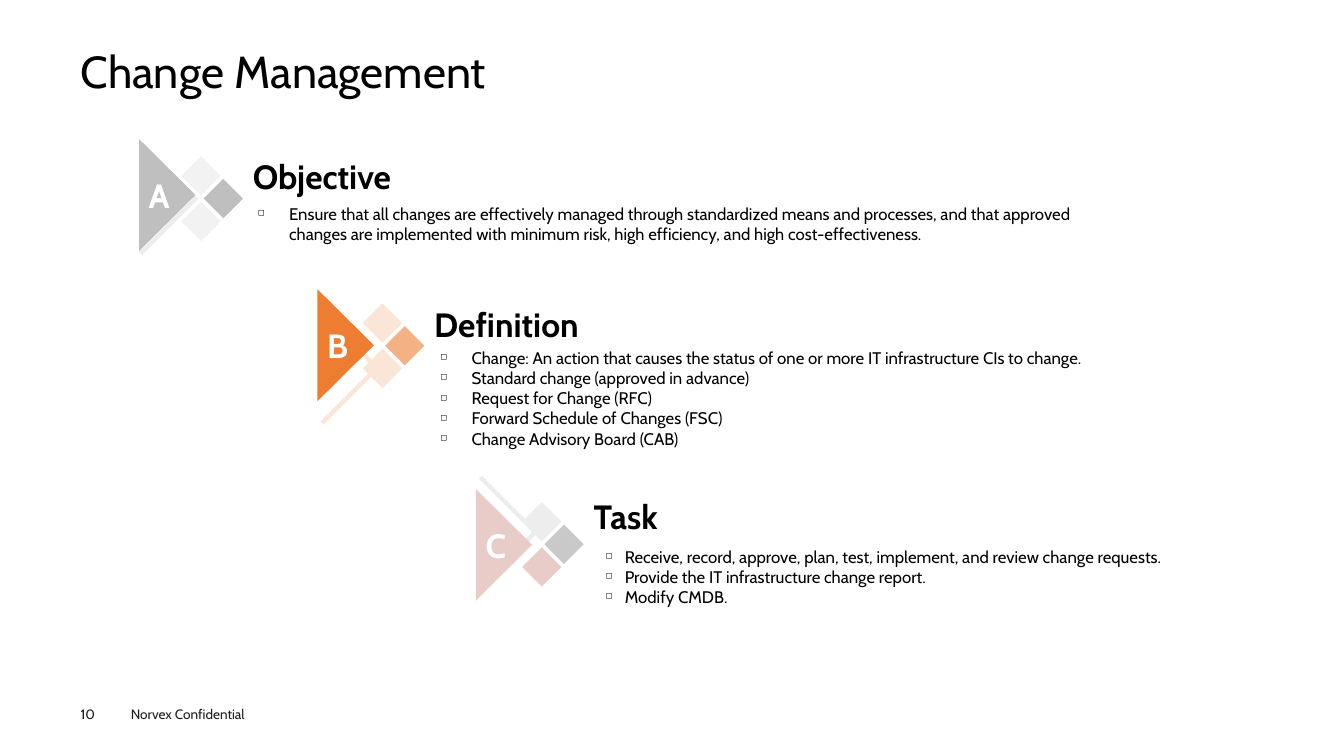
from dataclasses import dataclass

from lxml.etree import SubElement
from pptx import Presentation
from pptx.dml.color import RGBColor
from pptx.enum.shapes import MSO_SHAPE as Preset
from pptx.enum.text import MSO_ANCHOR as Anchor, PP_ALIGN as Align
from pptx.oxml.ns import qn
from pptx.util import Emu, Inches, Pt

CELL = 0.1
COLUMNS, ROWS = 133.33, 75
FONT = "Cabin"
COLORS = {
    "black": "000000",
    "white": "FFFFFF",
    "footer": "1D1D1B",
    "gray": "BFBFBF",
    "mid_gray": "C9C9C9",
    "pale_gray": "EDEDED",
    "faint_gray": "F2F2F2",
    "orange": "ED7D31",
    "light_orange": "F4B183",
    "pale_orange": "FBE5D6",
    "rose": "E7CCC7",
}
DIAMOND_SIZE = 3.9
DIAMOND_OFFSETS = ((0, 0), (0, 4.5), (2.2, 2.25))
TRIANGLE = ((0, 0), (5.6, 5.55), (0, 11.1))
CHEVRON = ((0.3, 0), (5.9, 5.6), (0.3, 11.2), (0, 10.9), (5.3, 5.6), (0, 0.3))

Point = tuple[float, float]


@dataclass(frozen=True)
class Area:
    column: float
    row: float
    columns: float
    rows: float


@dataclass(frozen=True)
class Style:
    size: float
    color: str = "black"
    bold: bool = False


@dataclass(frozen=True)
class Section:
    letter: str
    heading: str
    items: tuple[str, ...]
    triangle: Point
    chevron: Point
    diamonds: Point
    triangle_color: str
    chevron_color: str
    diamond_colors: tuple[str, str, str]
    heading_at: Point
    body: Area
    indent: float
    hanging: float


TITLE = Style(32)
HEADING = Style(24, bold=True)
LETTER = Style(24, "white", True)
BODY = Style(12)
FOOTER = Style(9.7, "footer")

SECTIONS = (
    Section(
        "A", "Objective",
        ("Ensure that all changes are effectively managed through standardized means and processes, "
         "and that approved changes are implemented with minimum risk, high efficiency, "
         "and high cost-effectiveness.",),
        (13.8, 13.8), (13.8, 14.1), (18, 15.5),
        "gray", "pale_gray", ("faint_gray", "faint_gray", "gray"),
        (24.1, 14.1), Area(19.6, 19.7, 89, 6.6), 8.1, 3.1,
    ),
    Section(
        "B", "Definition",
        ("Change: An action that causes the status of one or more IT infrastructure CIs to change.",
         "Standard change (approved in advance)",
         "Request for Change (RFC)",
         "Forward Schedule of Changes (FSC)",
         "Change Advisory Board (CAB)"),
        (31.5, 28.7), (31.8, 30.9), (36, 30.1),
        "orange", "pale_orange", ("pale_orange", "pale_orange", "light_orange"),
        (42.1, 28.7), Area(42.7, 34, 72.9, 14.9), 3.1, 3.1,
    ),
    Section(
        "C", "Task",
        ("Receive, record, approve, plan, test, implement, and review change requests.",
         "Provide the IT infrastructure change report.",
         "Modify CMDB."),
        (47.2, 48.5), (47.5, 47.2), (51.8, 49.8),
        "rose", "pale_gray", ("pale_gray", "rose", "mid_gray"),
        (57.9, 47.8), Area(59.1, 53.7, 62.6, 11.5), 1.9, 1.9,
    ),
)


def cells(count: float) -> Emu:
    return Inches(count * CELL)


def color(name: str) -> RGBColor:
    return RGBColor.from_string(COLORS[name])


def place(area: Area) -> tuple[Emu, ...]:
    return tuple(cells(n) for n in (area.column, area.row, area.columns, area.rows))


def paint(shape, fill: str) -> None:
    shape.shadow.inherit = False
    shape.fill.solid()
    shape.fill.fore_color.rgb = color(fill)
    shape.line.fill.background()


def style_para(para, style: Style) -> None:
    para.font.name = FONT
    para.font.size = Pt(style.size)
    para.font.bold = style.bold
    para.font.color.rgb = color(style.color)


def add_bullet(para, indent: float, hanging: float) -> None:
    properties = para._p.get_or_add_pPr()
    properties.set("marL", str(cells(indent)))
    properties.set("indent", str(-cells(hanging)))
    SubElement(properties, qn("a:buSzPct")).set("val", "50000")
    SubElement(properties, qn("a:buChar")).set("char", "◻")


def add_text(page, area: Area, lines: tuple[str, ...], style: Style,
             anchor=Anchor.TOP, inset: bool = True, bullet: Point | None = None):
    frame = page.shapes.add_textbox(*place(area)).text_frame
    frame.word_wrap = True
    frame.vertical_anchor = anchor
    if not inset:
        frame.margin_left = frame.margin_right = frame.margin_top = frame.margin_bottom = 0
    for index, line in enumerate(lines):
        para = frame.add_paragraph() if index else frame.paragraphs[0]
        para.text = line
        if bullet:
            add_bullet(para, *bullet)
        style_para(para, style)
    return frame


def add_outline(page, origin: Point, points: tuple[Point, ...], fill: str):
    corners = [(cells(origin[0] + x), cells(origin[1] + y)) for x, y in points]
    builder = page.shapes.build_freeform(*corners[0])
    builder.add_line_segments(corners[1:], close=True)
    shape = builder.convert_to_shape()
    paint(shape, fill)
    return shape


def add_emblem(page, section: Section) -> None:
    left, top = section.diamonds
    for (x, y), fill in zip(DIAMOND_OFFSETS, section.diamond_colors):
        area = Area(left + x, top + y, DIAMOND_SIZE, DIAMOND_SIZE)
        paint(page.shapes.add_shape(Preset.DIAMOND, *place(area)), fill)
    add_outline(page, section.chevron, CHEVRON, section.chevron_color)
    frame = add_outline(page, section.triangle, TRIANGLE, section.triangle_color).text_frame
    frame.margin_left = frame.margin_top = frame.margin_bottom = 0
    frame.margin_right = cells(1.6)
    frame.vertical_anchor = Anchor.MIDDLE
    para = frame.paragraphs[0]
    para.text = section.letter
    para.alignment = Align.CENTER
    style_para(para, LETTER)


def add_section(page, section: Section) -> None:
    add_emblem(page, section)
    add_text(page, section.body, section.items, BODY, bullet=(section.indent, section.hanging))
    add_text(page, Area(*section.heading_at, 38.3, 5.9), (section.heading,), HEADING, Anchor.BOTTOM)


def main() -> None:
    deck = Presentation()
    deck.slide_width, deck.slide_height = cells(COLUMNS), cells(ROWS)
    page = deck.slides.add_slide(deck.slide_layouts[6])
    add_text(page, Area(12, 69.5, 16, 2.7), ("Norvex Confidential",), FOOTER)
    add_text(page, Area(8, 70, 5.5, 1.6), ("10",), FOOTER, inset=False)
    title = add_text(page, Area(8, 4.9, 117.3, 5.4), ("Change Management",), TITLE, inset=False)
    title.paragraphs[0].line_spacing = 0.9
    for section in SECTIONS:
        add_section(page, section)
    deck.save("out.pptx")


if __name__ == "__main__":
    main()
